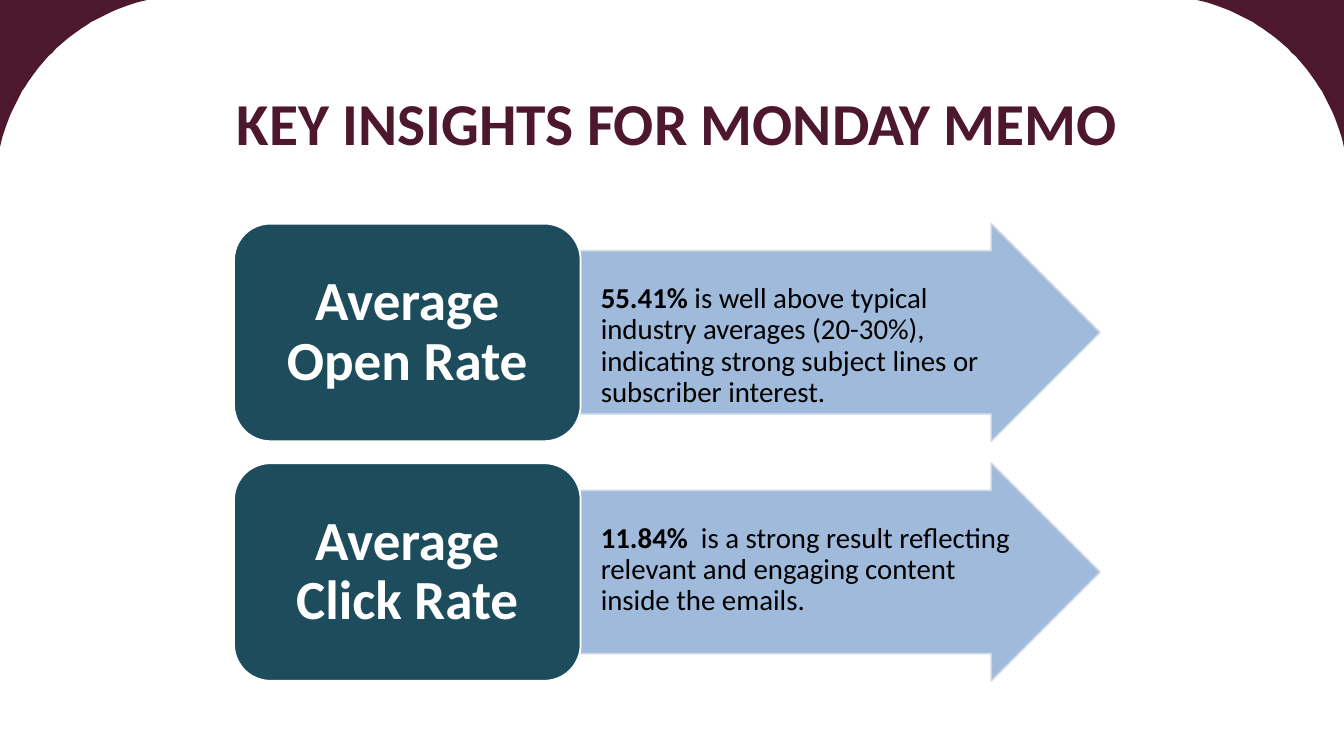
from math import acos, cos, pi, sin

from lxml import etree
from pptx import Presentation
from pptx.dml.color import RGBColor
from pptx.enum.shapes import MSO_SHAPE
from pptx.enum.text import MSO_ANCHOR, MSO_AUTO_SIZE, PP_ALIGN
from pptx.oxml.ns import qn
from pptx.util import Pt

PX = 9144  # EMU per px, 100 px to the inch
PAGE_WIDTH, PAGE_HEIGHT = 2199, 1237
TITLE_ONLY = 5
FONT = "Calibri"
COLORS = {
    "plum": "4D182E",
    "teal": "1D4D5D",
    "arrow": "95B3D7",
    "arrow_edge": "D0D8E8",
    "white": "FFFFFF",
    "black": "000000",
}
ARROW, ROUNDED = MSO_SHAPE.RIGHT_ARROW, MSO_SHAPE.ROUNDED_RECTANGLE
TOP, MIDDLE = MSO_ANCHOR.TOP, MSO_ANCHOR.MIDDLE
LEFT, CENTER = PP_ALIGN.LEFT, PP_ALIGN.CENTER

INSIGHTS = [
    ("Average Open Rate", "55.41%",
     " is well above typical industry averages (20-30%), "
     "indicating strong subject lines or subscriber interest."),
    ("Average Click Rate", "11.84%",
     "  is a strong result reflecting relevant and engaging content "
     "inside the emails."),
]
CARD_LEFT, CARD_TOP, CARD_WIDTH, CARD_HEIGHT = 383, 366, 1417, 356
CARD_PITCH = 392
LABEL_WIDTH = 567


def rgb(name):
    return RGBColor.from_string(COLORS[name])


def emu(*lengths):
    return [length * PX for length in lengths]


def set_alpha(fill, percent):
    color = fill._xPr.find(qn("a:solidFill"))[0]
    etree.SubElement(color, qn("a:alpha"), val=str(percent * 1000))


def style_para(para, size, color, align, bold=None):
    para.alignment = align
    font = para.font
    font.name, font.size, font.bold = FONT, Pt(size), bold
    font.color.rgb = rgb(color)


def set_frame(frame, insets, anchor):
    """Wrap the text and set its left, top, right and bottom insets."""
    frame.word_wrap = True
    frame.auto_size = MSO_AUTO_SIZE.NONE
    frame.vertical_anchor = anchor
    (frame.margin_left, frame.margin_top,
     frame.margin_right, frame.margin_bottom) = emu(*insets)


def add_block(page, kind, box, fill, edge):
    block = page.shapes.add_shape(kind, *emu(*box))
    block.shadow.inherit = False
    block.fill.solid()
    block.fill.fore_color.rgb = rgb(fill)
    block.line.color.rgb = rgb(edge)
    block.line.width = Pt(2)
    return block


def add_corner(page, edge, direction, center=312, radius=320, steps=40):
    """Fill the page corner left outside a circle, inward from the given edge."""
    start = acos(center / radius)
    angles = [start + (pi / 2 - 2 * start) * i / steps for i in range(steps + 1)]
    arc = [(edge + direction * max(0, center - radius * cos(angle)),
            max(0, center - radius * sin(angle))) for angle in angles]
    builder = page.shapes.build_freeform(edge, 0, scale=PX)
    builder.add_line_segments(arc, close=True)
    corner = builder.convert_to_shape()
    corner.shadow.inherit = False
    corner.fill.solid()
    corner.fill.fore_color.rgb = rgb("plum")
    corner.line.fill.background()


def add_title(page, box, text):
    title = page.shapes.title
    title.left, title.top, title.width, title.height = emu(*box)
    frame = title.text_frame
    frame.text = text
    set_frame(frame, (10, 5, 10, 5), MIDDLE)
    style_para(frame.paragraphs[0], 70, "plum", CENTER, bold=True)


def add_insight(page, box, label, figure, comment):
    left, top, width, height = box

    arrow_box = (left + LABEL_WIDTH, top, width - LABEL_WIDTH, height)
    arrow = add_block(page, ARROW, arrow_box, "arrow", "arrow_edge")
    arrow.adjustments[0], arrow.adjustments[1] = 0.75, 0.5
    set_alpha(arrow.fill, 90)
    set_alpha(arrow.line.fill, 90)
    set_frame(arrow.text_frame, (33, 54, 2, 2), TOP)
    para = arrow.text_frame.paragraphs[0]
    span = para.add_run()
    span.text = figure
    span.font.bold = True
    para.add_run().text = comment
    para.line_spacing = 0.9
    style_para(para, 34, "black", LEFT)

    label_box = (left, top, LABEL_WIDTH, height)
    badge = add_block(page, ROUNDED, label_box, "teal", "white")
    badge.text_frame.text = label
    set_frame(badge.text_frame, (27, 14, 27, 14), MIDDLE)
    para = badge.text_frame.paragraphs[0]
    para.line_spacing = 0.9
    style_para(para, 65, "white", CENTER, bold=True)


def main():
    deck = Presentation()
    deck.slide_width, deck.slide_height = emu(PAGE_WIDTH, PAGE_HEIGHT)
    page = deck.slides.add_slide(deck.slide_layouts[TITLE_ONLY])
    add_corner(page, PAGE_WIDTH, -1)
    add_corner(page, 0, 1)
    add_title(page, (68, 97, 2079, 206), "KEY INSIGHTS FOR MONDAY MEMO")
    for row, insight in enumerate(INSIGHTS):
        top = CARD_TOP + row * CARD_PITCH
        add_insight(page, (CARD_LEFT, top, CARD_WIDTH, CARD_HEIGHT), *insight)
    deck.save("out.pptx")


if __name__ == "__main__":
    main()
